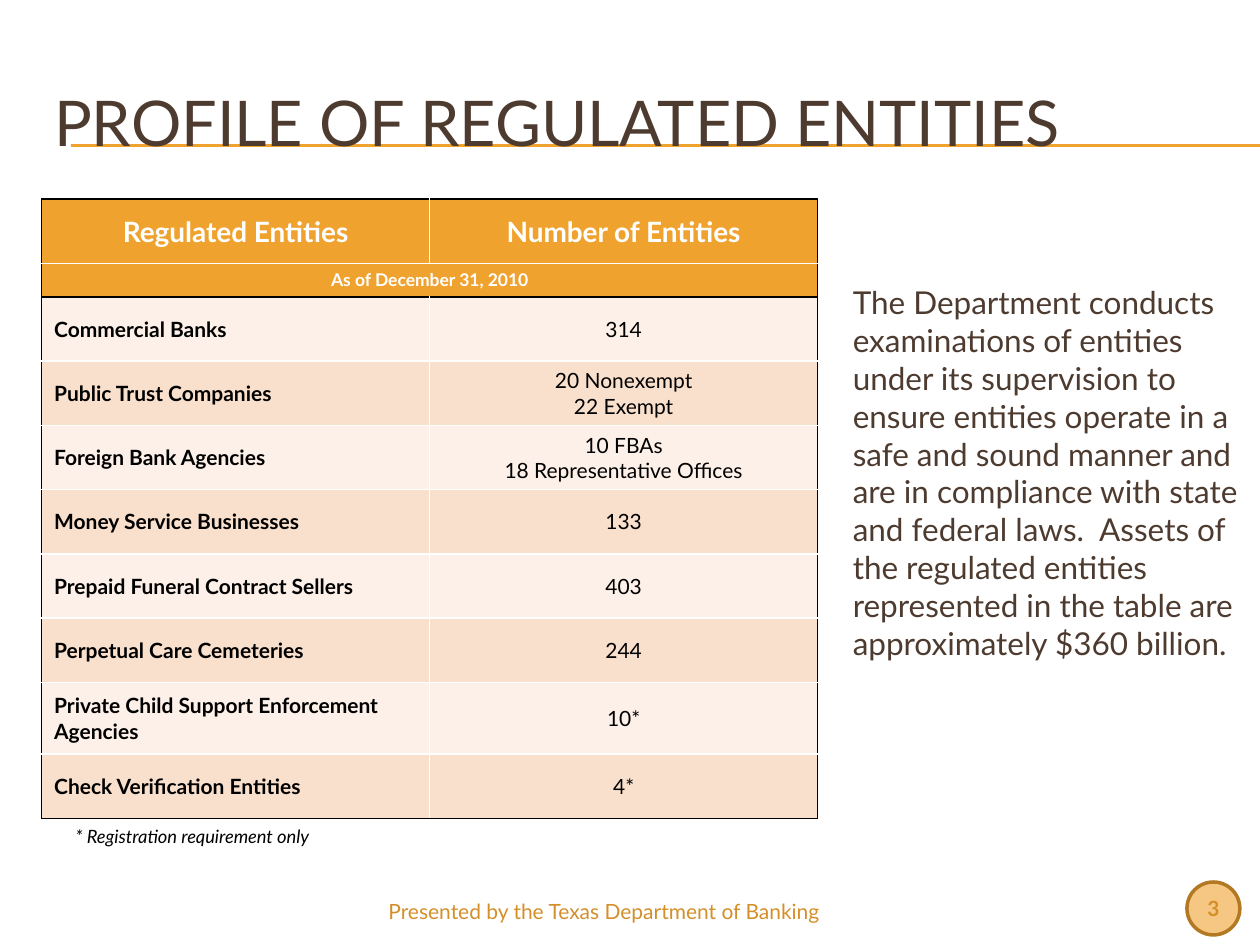
import pptx
import pptx.dml.color
import pptx.enum.shapes
import pptx.enum.text
import pptx.oxml
import pptx.oxml.ns
import pptx.util
import lxml.etree

Inches = pptx.util.Inches
Align = pptx.enum.text.PP_ALIGN
Anchor = pptx.enum.text.MSO_ANCHOR
qn = pptx.oxml.ns.qn

GOLD, BROWN, RUST = "F0A22E", "4E3B30", "D48F29"
BLACK, WHITE = "000000", "FFFFFF"
BANDS = ["FCF0E8", "F9E0CD"]

HEAD = ["Regulated Entities", "Number of Entities"]
DATE = "As of December 31, 2010"
DATA = [
    ("Commercial Banks", ["314"]),
    ("Public Trust Companies", ["20 Nonexempt", "22 Exempt"]),
    ("Foreign Bank Agencies", ["10 FBAs", "18 Representative Offices"]),
    ("Money Service Businesses", ["133"]),
    ("Prepaid Funeral Contract Sellers", ["403"]),
    ("Perpetual Care Cemeteries", ["244"]),
    ("Private Child Support Enforcement Agencies", ["10*"]),
    ("Check Verification Entities", ["4*"]),
]
TALL = {1: 0.26, 8: 0.57}
TITLE = "PROFILE OF REGULATED ENTITIES"
BODY = [
    "The Department conducts examinations of entities under its supervision "
    "to ensure entities operate in a safe and sound manner and are in "
    "compliance with state and federal laws.  Assets of the regulated "
    "entities represented in the table are",
    "approximately $360 billion.",
]
NOTES = [
    ((0.5, 6.5, 2.33, 0.28), ["* Registration requirement only"],
     dict(size=10.5, color=BLACK, italic=True)),
    ((6.67, 2.2, 3.33, 3.13), BODY, dict(size=18, color=BROWN)),
    ((2.92, 7.08, 3.75, 0.32), ["Presented by the Texas Department of Banking"],
     dict(size=12, color=RUST, align=Align.CENTER)),
]


def rgb(code):
    return pptx.dml.color.RGBColor.from_string(code)


def paint(thing, code):
    thing.fill.solid()
    thing.fill.fore_color.rgb = rgb(code)


def write(frame, lines, size, color, align=Align.LEFT, **style):
    frame.word_wrap = True
    for i, line in enumerate(lines):
        para = frame.add_paragraph() if i else frame.paragraphs[0]
        para.alignment = align
        run = para.add_run()
        run.text = line
        look = dict(name="Lato", size=pptx.util.Pt(size), bold=False) | style
        for key, value in look.items():
            setattr(run.font, key, value)
        run.font.color.rgb = rgb(color)


def edge(cell, colors):
    props = cell._tc.get_or_add_tcPr()
    for i, (side, code) in enumerate(zip("LRTB", colors)):
        line = lxml.etree.Element(qn("a:ln" + side), w="12700")
        fill = lxml.etree.SubElement(line, qn("a:solidFill"))
        lxml.etree.SubElement(fill, qn("a:srgbClr"), val=code)
        props.insert(i, line)


def rules(slide):
    for y in (1.15, 1.16):
        line = slide.shapes.add_connector(
            pptx.enum.shapes.MSO_CONNECTOR.STRAIGHT,
            Inches(0.56), Inches(y), Inches(10), Inches(y))
        line.line.color.rgb = rgb(GOLD)
        line.line.width = pptx.util.Pt(0.75)
        lxml.etree.SubElement(line._element.spPr, qn("a:effectLst"))


def badge(slide):
    disc = slide.shapes.add_shape(
        pptx.enum.shapes.MSO_SHAPE.OVAL,
        *map(Inches, (9.42, 7, 0.42, 0.42)))
    disc.shadow.inherit = False
    paint(disc, "F6C782")
    disc.line.color.rgb = rgb("B27822")
    disc.line.width = pptx.util.Pt(2)
    frame = disc.text_frame
    for side in ("left", "right", "top", "bottom"):
        setattr(frame, "margin_" + side, 0)
    frame.vertical_anchor = Anchor.MIDDLE
    write(frame, ["3"], 12, RUST, Align.CENTER, bold=True)


def grid(slide):
    count = len(DATA) + 2
    table = slide.shapes.add_table(
        count, 2, *map(Inches, (0.33, 1.58, 6.17, 4.91))).table
    for col in table.columns:
        col.width = Inches(3.08)
    for r, row in enumerate(table.rows):
        row.height = Inches(TALL.get(r, 0.51))
        for c, cell in enumerate(row.cells):
            paint(cell, GOLD if r < 2 else BANDS[r % 2])
            cell.vertical_anchor = Anchor.TOP if r == 1 else Anchor.MIDDLE
            black = (c == 0, c == 1 or r == 1,
                     r in (0, 2), r in (1, count - 1))
            edge(cell, [BLACK if b else WHITE for b in black])
    table.cell(1, 0).merge(table.cell(1, 1))
    for c, text in enumerate(HEAD):
        write(table.cell(0, c).text_frame, [text], 16, WHITE,
              Align.CENTER, bold=True)
    write(table.cell(1, 0).text_frame, [DATE], 10, WHITE,
          Align.CENTER, bold=True)
    for r, (name, lines) in enumerate(DATA, 2):
        write(table.cell(r, 0).text_frame, [name], 12, BLACK, bold=True)
        write(table.cell(r, 1).text_frame, lines, 12, BLACK, Align.CENTER)


def main():
    deck = pptx.Presentation()
    deck.slide_width, deck.slide_height = Inches(10), Inches(7.5)
    slide = deck.slides.add_slide(deck.slide_layouts[5])
    rules(slide)
    title = slide.shapes.title
    place = dict(left=0.33, top=0.5, width=9.5, height=0.92)
    for key, value in place.items():
        setattr(title, key, Inches(value))
    title.text_frame.vertical_anchor = Anchor.MIDDLE
    write(title.text_frame, [TITLE], 36, BROWN)
    slide.shapes._spTree.append(title._element)
    badge(slide)
    grid(slide)
    for box, lines, style in NOTES:
        note = slide.shapes.add_textbox(*map(Inches, box))
        write(note.text_frame, lines, **style)
    deck.save("out.pptx")


if __name__ == "__main__":
    main()
